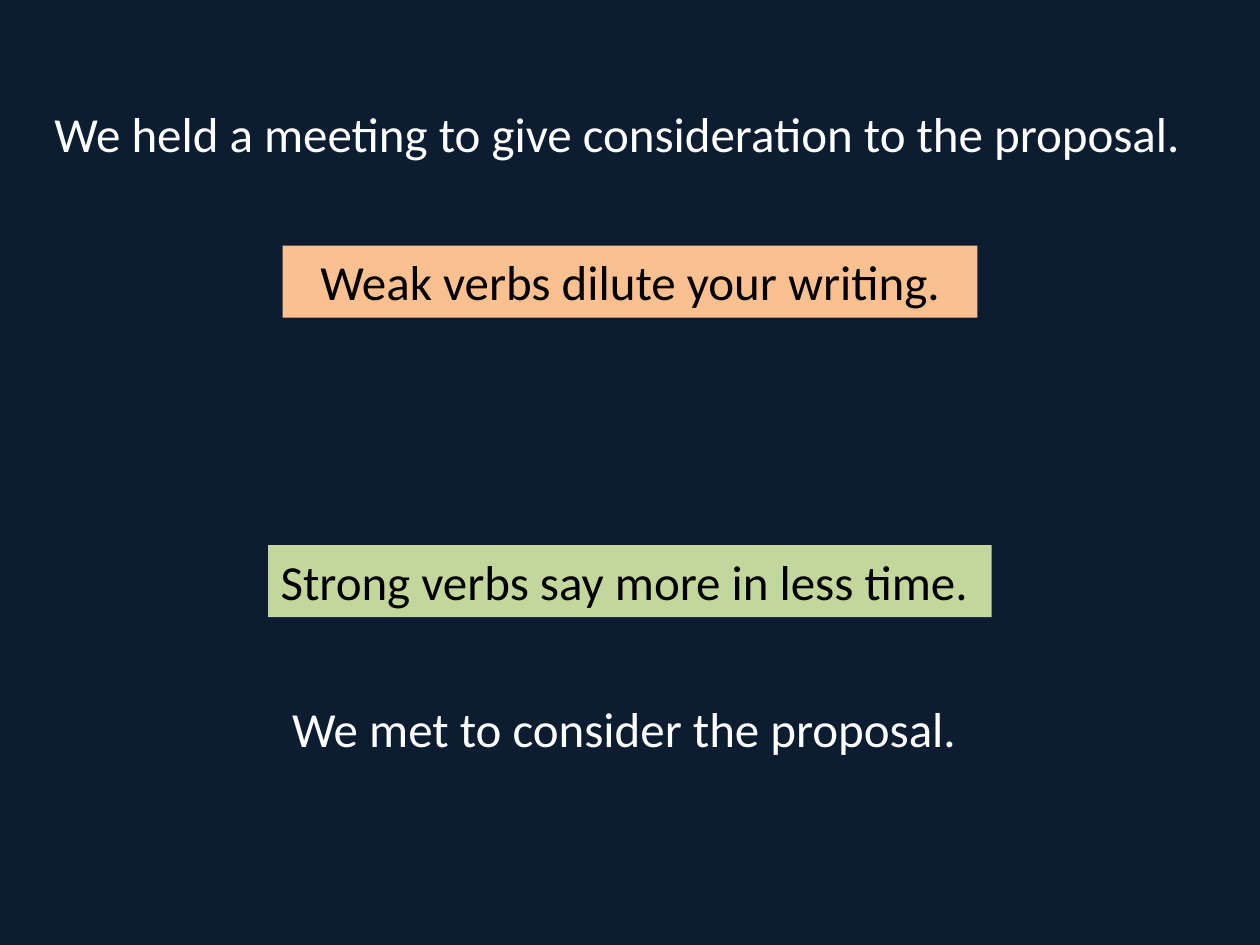
import pptx
import pptx.dml.color
import pptx.enum.text
import pptx.util

Pt = pptx.util.Pt
ALIGN = pptx.enum.text.PP_ALIGN
HEIGHT = 41.2


def rgb(value):
    return pptx.dml.color.RGBColor.from_string(value)


def set_background(s, color):
    fill = s.background.fill
    fill.solid()
    fill.fore_color.rgb = rgb(color)


def add_sentence(s, text, left, top, width, color, wrap=True, align=ALIGN.LEFT):
    sp = s.shapes.add_textbox(Pt(left), Pt(top), Pt(width), Pt(HEIGHT))
    tf = sp.text_frame
    frame = {
        "word_wrap": wrap,
        "auto_size": pptx.enum.text.MSO_AUTO_SIZE.SHAPE_TO_FIT_TEXT,
    }
    for name, value in frame.items():
        setattr(tf, name, value)
    p = tf.paragraphs[0]
    p.alignment = align
    r = p.add_run()
    r.text = text
    for name, value in {"name": "Calibri", "size": Pt(28)}.items():
        setattr(r.font, name, value)
    r.font.color.rgb = rgb(color)
    return sp


def add_banner(s, text, left, top, width, fill, **layout):
    sp = add_sentence(s, text, left, top, width, "000000", **layout)
    sp.fill.solid()
    sp.fill.fore_color.rgb = rgb(fill)


def main():
    prs = pptx.Presentation()
    prs.slide_width, prs.slide_height = Pt(720), Pt(540)
    s = prs.slides.add_slide(prs.slide_layouts[6])
    set_background(s, "0C1D32")
    add_banner(s, "Weak verbs dilute your writing.", 161.5, 140.4, 397,
               "FAC090", align=ALIGN.CENTER)
    add_banner(s, "Strong verbs say more in less time.", 153.3, 311.5, 413.4,
               "C3D69B", wrap=False)
    add_sentence(s, "We held a meeting to give consideration to the proposal.",
                 24, 55.5, 672, "FFFFFF")
    add_sentence(s, "We met to consider the proposal.", 159.8, 395.5, 400.4,
                 "FFFFFF", wrap=False)
    prs.save("out.pptx")


if __name__ == "__main__":
    main()
